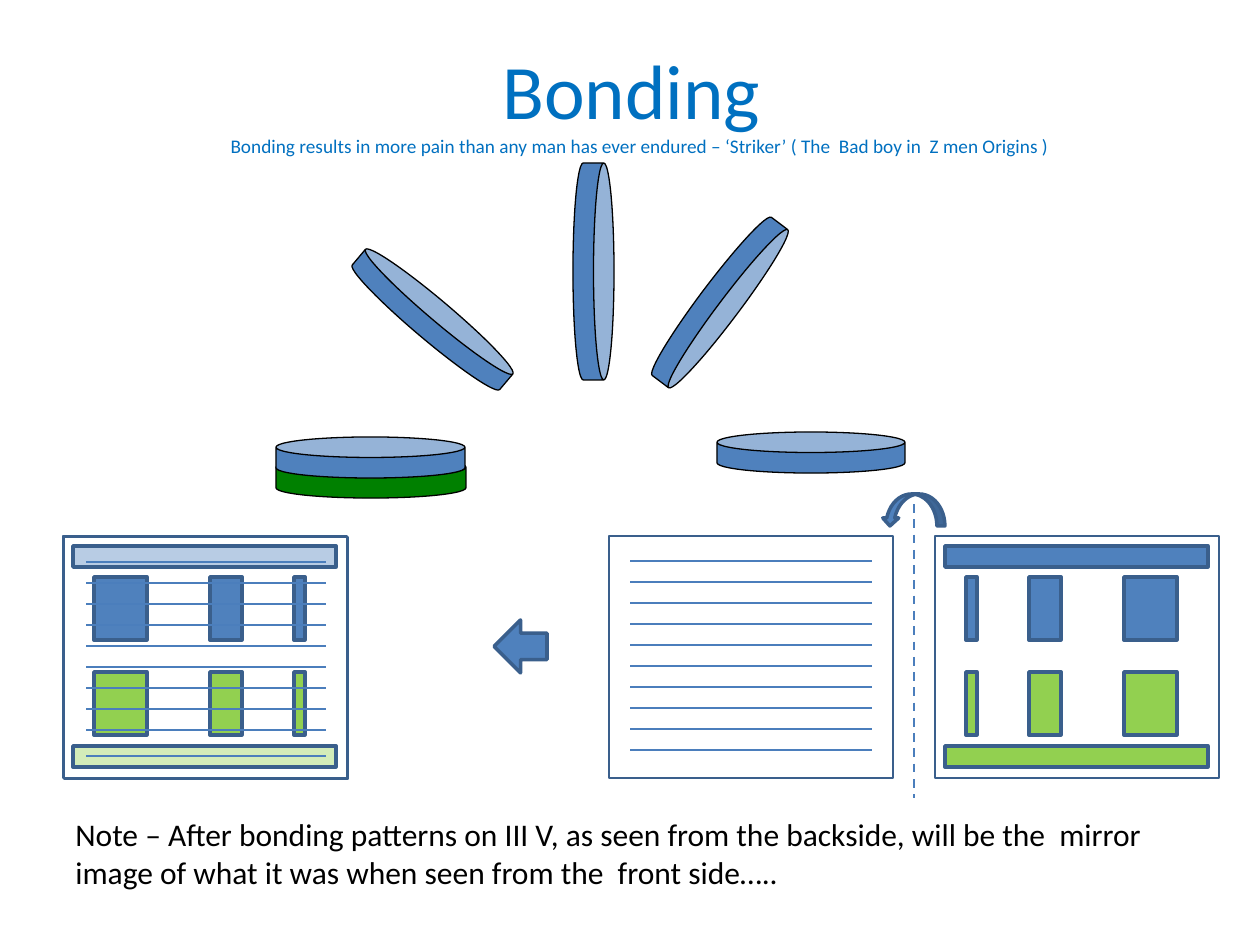
"""Build the wafer bonding slide with its flipped and stacked patterns."""
import dataclasses
import typing

import pptx
import pptx.dml.color
import pptx.enum.dml
import pptx.enum.shapes
import pptx.enum.text
import pptx.oxml
import pptx.oxml.ns
import pptx.util

SHAPE = pptx.enum.shapes.MSO_SHAPE
EMU_PER_PX = 914400 / 126


@dataclasses.dataclass(frozen=True)
class Theme:
    font: str = "Calibri"
    heading: str = "0070C0"
    ink: str = "000000"
    blue: str = "4F81BD"
    green: str = "92D050"
    base: str = "008000"
    border: str = "3A5F8C"
    stroke: str = "4B7EBC"
    title_size: int = 44
    subtitle_size: int = 11
    note_size: int = 18
    thin: float = 0.75
    frame: float = 1
    rule: float = 1.25
    heavy: float = 2


class Area(typing.NamedTuple):
    left: int
    top: int
    width: int
    height: int


class Wafer(typing.NamedTuple):
    area: Area
    color: str
    rotation: float = 0


class Pad(typing.NamedTuple):
    offset: int
    width: int


THEME = Theme()
PANEL_TOP, PANEL_WIDTH, PANEL_HEIGHT = 536, 284, 242
PAD_INSET, PAD_SPAN = 31, 211
PADS = [Pad(0, 11), Pad(63, 32), Pad(158, 53)]
WAFERS = [
    Wafer(Area(276, 457, 190, 41), THEME.base),
    Wafer(Area(717, 432, 188, 41), THEME.blue),
    Wafer(Area(336, 299, 193, 41), THEME.blue, 40.2),
    Wafer(Area(621, 282, 198, 41), THEME.blue, 127),
    Wafer(Area(485, 251, 217, 41), THEME.blue, 90),
    Wafer(Area(276, 437, 189, 41), THEME.blue),
]


def px(value: int) -> int:
    """Convert pixels to EMU."""
    return round(value * EMU_PER_PX)


def rgb(color: str) -> pptx.dml.color.RGBColor:
    """Return the colour for a hexadecimal string."""
    return pptx.dml.color.RGBColor.from_string(color)


def place(box, area: Area) -> None:
    """Move and size a box."""
    box.left, box.top, box.width, box.height = map(px, area)


def format_span(span, size: float, color: str) -> None:
    """Apply the theme font, a size and a colour to a text run."""
    span.font.name = THEME.font
    span.font.size = pptx.util.Pt(size)
    span.font.color.rgb = rgb(color)


def add_box(page, kind, area: Area, color: typing.Optional[str], weight: float,
            border: str = THEME.border, opacity: int = 100):
    """Draw a preset shape, hollow when it has no colour."""
    box = page.shapes.add_shape(kind, *map(px, area))
    box.shadow.inherit = False
    box.line.color.rgb = rgb(border)
    box.line.width = pptx.util.Pt(weight)
    if color is None:
        box.fill.background()
        return box
    box.fill.solid()
    box.fill.fore_color.rgb = rgb(color)
    if opacity < 100:
        tint = box._element.spPr.find(".//" + pptx.oxml.ns.qn("a:srgbClr"))
        alpha = pptx.oxml.parse_xml(f"<a:alpha {pptx.oxml.ns.nsdecls('a')} val='{opacity * 1000}'/>")
        tint.append(alpha)
    return box


def add_line(page, start: tuple[int, int], end: tuple[int, int]):
    """Draw a straight line without a shadow."""
    line = page.shapes.add_connector(
        pptx.enum.shapes.MSO_CONNECTOR.STRAIGHT, *map(px, start + end))
    line.line.color.rgb = rgb(THEME.stroke)
    line.line.width = pptx.util.Pt(THEME.rule)
    line._element.spPr.append(
        pptx.oxml.parse_xml(f"<a:effectLst {pptx.oxml.ns.nsdecls('a')}/>"))
    return line


def add_wafer(page, wafer: Wafer) -> None:
    """Draw one wafer as a flat can."""
    box = add_box(page, SHAPE.CAN, wafer.area, wafer.color, THEME.thin, THEME.ink)
    box.adjustments[0] = 0.5
    box.rotation = wafer.rotation


def add_panel(page, left: int, top: int = PANEL_TOP) -> None:
    """Draw the hollow frame of a pattern."""
    area = Area(left, top, PANEL_WIDTH, PANEL_HEIGHT)
    add_box(page, SHAPE.RECTANGLE, area, None, THEME.frame)


def add_gratings(page, start: int, end: int, rows: list[int]) -> None:
    """Draw one horizontal line per row."""
    for row in rows:
        add_line(page, (start, row), (end, row))


def add_pattern(page, left: int, mirrored: bool) -> None:
    """Draw the bars and pads of a panel, mirrored if asked."""
    opacity = 40 if mirrored else 100
    for color, bar_top, pad_top in ((THEME.blue, 546, 577), (THEME.green, 746, 672)):
        add_box(page, SHAPE.RECTANGLE, Area(left + 10, bar_top, 263, 21), color,
                THEME.heavy, opacity=opacity)
        for pad in PADS:
            offset = PAD_SPAN - pad.offset - pad.width if mirrored else pad.offset
            area = Area(left + PAD_INSET + offset, pad_top, pad.width, 63)
            add_box(page, SHAPE.RECTANGLE, area, color, THEME.heavy)


def add_title(page) -> None:
    """Fill the title placeholder with the heading and its subtitle."""
    title = page.shapes.title
    place(title, Area(73, 21, 1134, 158))
    frame = title.text_frame
    frame.text = ("Bonding \vBonding results in more pain than any man has ever endured "
                  "– ‘Striker’ ( The  Bad boy in  Z men Origins )")
    frame.auto_size = pptx.enum.text.MSO_AUTO_SIZE.NONE
    frame.vertical_anchor = pptx.enum.text.MSO_ANCHOR.MIDDLE
    para = frame.paragraphs[0]
    para.alignment = pptx.enum.text.PP_ALIGN.CENTER
    for span, size in zip(para.runs, (THEME.title_size, THEME.subtitle_size)):
        format_span(span, size, THEME.heading)


def add_note(page) -> None:
    """Write the note under the panels."""
    box = page.shapes.add_textbox(*map(px, Area(63, 809, 1176, 89)))
    frame = box.text_frame
    frame.word_wrap = True
    frame.auto_size = pptx.enum.text.MSO_AUTO_SIZE.SHAPE_TO_FIT_TEXT
    frame.text = ("Note – After bonding patterns on III V, as seen from the backside, will be "
                  "the  mirror image of what it was when seen from the  front side…..")
    format_span(frame.paragraphs[0].runs[0], THEME.note_size, THEME.ink)


def main() -> None:
    """Build and save the deck."""
    deck = pptx.Presentation()
    deck.slide_width, deck.slide_height = px(1260), px(945)
    page = deck.slides.add_slide(deck.slide_layouts[5])
    add_title(page)
    for wafer in WAFERS:
        add_wafer(page, wafer)
    add_panel(page, 63)
    add_gratings(page, 630, 872, [561 + 21 * row for row in range(10)])
    add_panel(page, 609)
    add_pattern(page, 63, mirrored=True)
    add_panel(page, 935)
    add_pattern(page, 935, mirrored=False)
    arrow = add_box(page, SHAPE.DOWN_ARROW, Area(494, 620, 53, 53), THEME.blue, THEME.heavy)
    arrow.rotation = 90
    add_gratings(page, 326, 86, [562 + 21 * row for row in range(9)] + [756])
    add_panel(page, 64, PANEL_TOP + 1)
    add_note(page)
    axis = add_line(page, (914, 504), (914, 798))
    axis.line.dash_style = pptx.enum.dml.MSO_LINE.DASH
    turn = add_box(page, SHAPE.CURVED_DOWN_ARROW, Area(882, 494, 63, 32),
                   THEME.blue, THEME.heavy)
    turn._element.spPr.xfrm.set("flipH", "1")
    deck.save("out.pptx")


if __name__ == "__main__":
    main()
